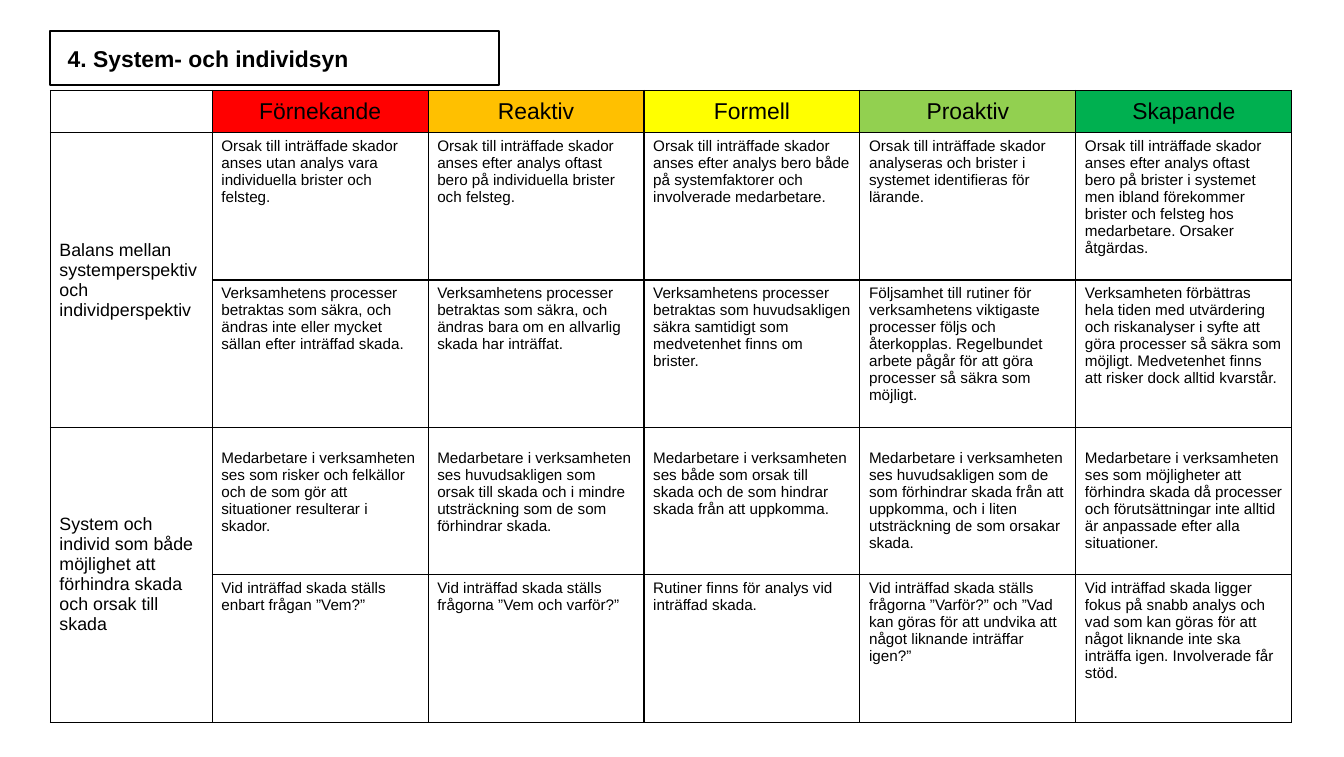
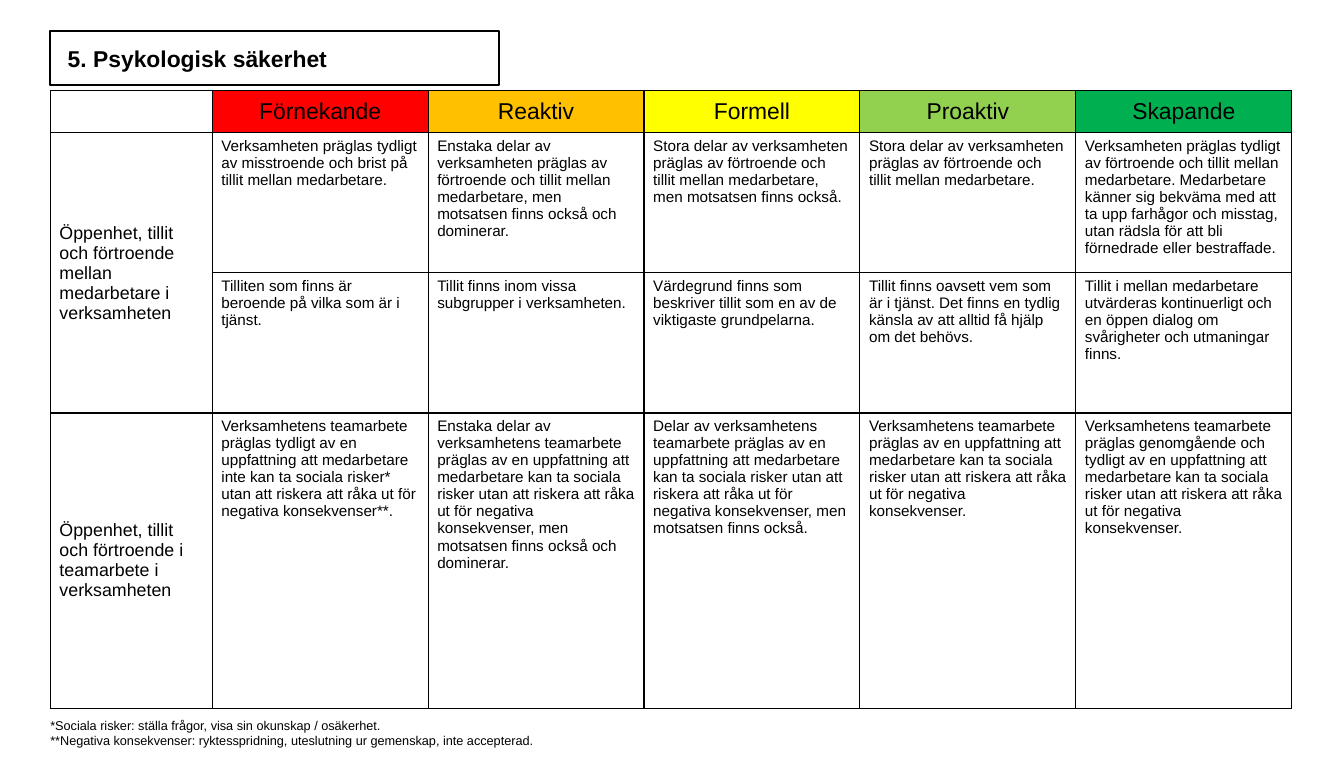
from lxml.etree import SubElement
from pptx import Presentation
from pptx.dml.color import RGBColor
from pptx.enum.shapes import MSO_SHAPE
from pptx.enum.text import MSO_ANCHOR, PP_ALIGN
from pptx.oxml.ns import qn
from pptx.util import Inches, Pt

COLORS = {
    "text": "000000",
    "line": "000000",
    "cell": "FFFFFF",
    "Förnekande": "FF0000",
    "Reaktiv": "FFC000",
    "Formell": "FFFF00",
    "Proaktiv": "92D050",
    "Skapande": "00B050",
}
LEVELS = ["Förnekande", "Reaktiv", "Formell", "Proaktiv", "Skapande"]
FORMATS = {
    "title": {"size": Pt(18), "bold": True},
    "level": {"size": Pt(18), "bold": False},
    "label": {"size": Pt(14), "bold": False},
    "body": {"size": Pt(12), "bold": False},
    "note": {"size": Pt(10), "bold": False},
}
NO_MARGINS = {"margin_left": 0, "margin_right": 0, "margin_top": 0, "margin_bottom": 0}

# The grid: the label column is three quarters of a level column,
# and heights are counted in header rows.
COL, ROW = Inches(2.36), Inches(0.46)
LEFT = Inches(0.55)
TITLE_TOP, TABLE_TOP, NOTE_TOP = 0.74 * ROW, 2.15 * ROW, 17.04 * ROW
COL_SHARES = [0.75] + [1] * len(LEVELS)

# Each row of a table: height, label, rows the label spans, blank lines on top, texts.
SLIDES = [
    {
        "title": "4. System- och individsyn",
        "rows": [
            (3.5, "Balans mellan systemperspektiv och individperspektiv", 2, 0, [
                "Orsak till inträffade skador anses utan analys vara individuella brister och felsteg.",
                "Orsak till inträffade skador anses efter analys oftast bero på individuella brister "
                "och felsteg.",
                "Orsak till inträffade skador anses efter analys bero både på systemfaktorer och "
                "involverade medarbetare.",
                "Orsak till inträffade skador analyseras och brister i systemet identifieras för lärande.",
                "Orsak till inträffade skador anses efter analys oftast bero på brister i systemet men "
                "ibland förekommer brister och felsteg hos medarbetare. Orsaker åtgärdas.",
            ]),
            (3.5, "", 1, 0, [
                "Verksamhetens processer betraktas som säkra, och ändras inte eller mycket sällan efter "
                "inträffad skada.",
                "Verksamhetens processer betraktas som säkra, och ändras bara om en allvarlig skada har "
                "inträffat.",
                "Verksamhetens processer betraktas som huvudsakligen säkra samtidigt som medvetenhet "
                "finns om brister.",
                "Följsamhet till rutiner för verksamhetens viktigaste processer följs och återkopplas. "
                "Regelbundet arbete pågår för att göra processer så säkra som möjligt.",
                "Verksamheten förbättras hela tiden med utvärdering och riskanalyser i syfte att göra "
                "processer så säkra som möjligt. Medvetenhet finns att risker dock alltid kvarstår.",
            ]),
            (3.5, "System och individ som både möjlighet att förhindra skada och orsak till skada", 2, 1, [
                "Medarbetare i verksamheten ses som risker och felkällor och de som gör att situationer "
                "resulterar i skador.",
                "Medarbetare i verksamheten ses huvudsakligen som orsak till skada och i mindre "
                "utsträckning som de som förhindrar skada.",
                "Medarbetare i verksamheten ses både som orsak till skada och de som hindrar skada från "
                "att uppkomma.",
                "Medarbetare i verksamheten ses huvudsakligen som de som förhindrar skada från att "
                "uppkomma, och i liten utsträckning de som orsakar skada.",
                "Medarbetare i verksamheten ses som möjligheter att förhindra skada då processer och "
                "förutsättningar inte alltid är anpassade efter alla situationer.",
            ]),
            (3.5, "", 1, 0, [
                "Vid inträffad skada ställs enbart frågan ”Vem?”",
                "Vid inträffad skada ställs frågorna ”Vem och varför?”",
                "Rutiner finns för analys vid inträffad skada.",
                "Vid inträffad skada ställs frågorna ”Varför?” och ”Vad kan göras för att undvika att "
                "något liknande inträffar igen?”",
                "Vid inträffad skada ligger fokus på snabb analys och vad som kan göras för att något "
                "liknande inte ska inträffa igen. Involverade får stöd.",
            ]),
        ],
        "notes": [],
    },
    {
        "title": "5. Psykologisk säkerhet",
        "rows": [
            (3.33, "Öppenhet, tillit och förtroende mellan medarbetare i verksamheten", 2, 0, [
                "Verksamheten präglas tydligt av misstroende och brist på tillit mellan medarbetare.",
                "Enstaka delar av verksamheten präglas av förtroende och tillit mellan medarbetare, men "
                "motsatsen finns också och dominerar.",
                "Stora delar av verksamheten präglas av förtroende och tillit mellan medarbetare, men "
                "motsatsen finns också.",
                "Stora delar av verksamheten präglas av förtroende och tillit mellan medarbetare.",
                "Verksamheten präglas tydligt av förtroende och tillit mellan medarbetare. Medarbetare "
                "känner sig bekväma med att ta upp farhågor och misstag, utan rädsla för att bli "
                "förnedrade eller bestraffade.",
            ]),
            (3.33, "", 1, 0, [
                "Tilliten som finns är beroende på vilka som är i tjänst.",
                "Tillit finns inom vissa subgrupper i verksamheten.",
                "Värdegrund finns som beskriver tillit som en av de viktigaste grundpelarna.",
                "Tillit finns oavsett vem som är i tjänst. Det finns en tydlig känsla av att alltid få "
                "hjälp om det behövs.",
                "Tillit i mellan medarbetare utvärderas kontinuerligt och en öppen dialog om svårigheter "
                "och utmaningar finns.",
            ]),
            (7.02, "Öppenhet, tillit och förtroende i teamarbete i verksamheten", 1, 0, [
                "Verksamhetens teamarbete präglas tydligt av en uppfattning att medarbetare inte kan ta "
                "sociala risker* utan att riskera att råka ut för negativa konsekvenser**.",
                "Enstaka delar av verksamhetens teamarbete präglas av en uppfattning att medarbetare kan "
                "ta sociala risker utan att riskera att råka ut för negativa konsekvenser, men motsatsen "
                "finns också och dominerar.",
                "Delar av verksamhetens teamarbete präglas av en uppfattning att medarbetare kan ta "
                "sociala risker utan att riskera att råka ut för negativa konsekvenser, men motsatsen "
                "finns också.",
                "Verksamhetens teamarbete präglas av en uppfattning att medarbetare kan ta sociala "
                "risker utan att riskera att råka ut för negativa konsekvenser.",
                "Verksamhetens teamarbete präglas genomgående och tydligt av en uppfattning att "
                "medarbetare kan ta sociala risker utan att riskera att råka ut för negativa "
                "konsekvenser.",
            ]),
        ],
        "notes": [
            "*Sociala risker: ställa frågor, visa sin okunskap / osäkerhet.",
            "**Negativa konsekvenser: ryktesspridning, uteslutning ur gemenskap, inte accepterad.",
        ],
    },
]


def write(tf, lines, style, align=PP_ALIGN.LEFT):
    for i, line in enumerate(lines):
        p = tf.add_paragraph() if i else tf.paragraphs[0]
        p.alignment = align
        r = p.add_run()
        r.text = line
        r.font.name = "Arial"
        r.font.color.rgb = RGBColor.from_string(COLORS["text"])
        for name, value in FORMATS[style].items():
            setattr(r.font, name, value)


def paint(cell, color):
    """Border a cell on all sides, then fill it; the schema wants lines first."""
    tc_pr = cell._tc.get_or_add_tcPr()
    for side in ("a:lnL", "a:lnR", "a:lnT", "a:lnB"):
        ln = SubElement(tc_pr, qn(side), w=str(Pt(1)))
        SubElement(SubElement(ln, qn("a:solidFill")), qn("a:srgbClr"), val=COLORS[color])
    cell.fill.solid()
    cell.fill.fore_color.rgb = RGBColor.from_string(COLORS["cell"])


prs = Presentation()
prs.slide_width, prs.slide_height = Inches(14.69), Inches(8.27)

for content in SLIDES:
    s = prs.slides.add_slide(prs.slide_layouts[6])
    heights = [1] + [row[0] for row in content["rows"]]

    table = s.shapes.add_table(
        len(heights), len(COL_SHARES), LEFT, int(TABLE_TOP),
        int(sum(COL_SHARES) * COL), int(sum(heights) * ROW),
    ).table
    table.first_row = table.horz_banding = False
    for column, share in zip(table.columns, COL_SHARES):
        column.width = int(share * COL)
    for row, height in zip(table.rows, heights):
        row.height = int(height * ROW)
    for cell in table.iter_cells():
        paint(cell, "line")

    for j, level in enumerate(LEVELS, 1):
        cell = table.cell(0, j)
        cell.fill.fore_color.rgb = RGBColor.from_string(COLORS[level])
        cell.vertical_anchor = MSO_ANCHOR.MIDDLE
        write(cell.text_frame, [level], "level", PP_ALIGN.CENTER)

    for i, (_, label, span, blank_lines, texts) in enumerate(content["rows"], 1):
        if label:
            cell = table.cell(i, 0)
            if span > 1:
                cell.merge(table.cell(i + span - 1, 0))
            cell.vertical_anchor = MSO_ANCHOR.MIDDLE
            write(cell.text_frame, [label], "label")
        for j, text in enumerate(texts, 1):
            cell = table.cell(i, j)
            cell.margin_top = Inches(0.05 + 0.19 * blank_lines)
            write(cell.text_frame, [text], "body")

    sp = s.shapes.add_shape(
        MSO_SHAPE.RECTANGLE, LEFT, int(TITLE_TOP), int(2.08 * COL), int(1.28 * ROW))
    sp.shadow.inherit = False
    sp.fill.background()
    sp.line.color.rgb = RGBColor.from_string(COLORS["line"])
    sp.line.width = Pt(1.5)
    tf = sp.text_frame
    title_frame = NO_MARGINS | {
        "margin_left": Inches(0.19), "word_wrap": True, "vertical_anchor": MSO_ANCHOR.MIDDLE}
    for name, value in title_frame.items():
        setattr(tf, name, value)
    write(tf, [content["title"]], "title")

    if content["notes"]:
        tf = s.shapes.add_textbox(
            LEFT, int(NOTE_TOP), int(3.2 * COL), int(0.93 * ROW)).text_frame
        for name, value in (NO_MARGINS | {"word_wrap": True}).items():
            setattr(tf, name, value)
        write(tf, content["notes"], "note")

prs.save("out.pptx")
